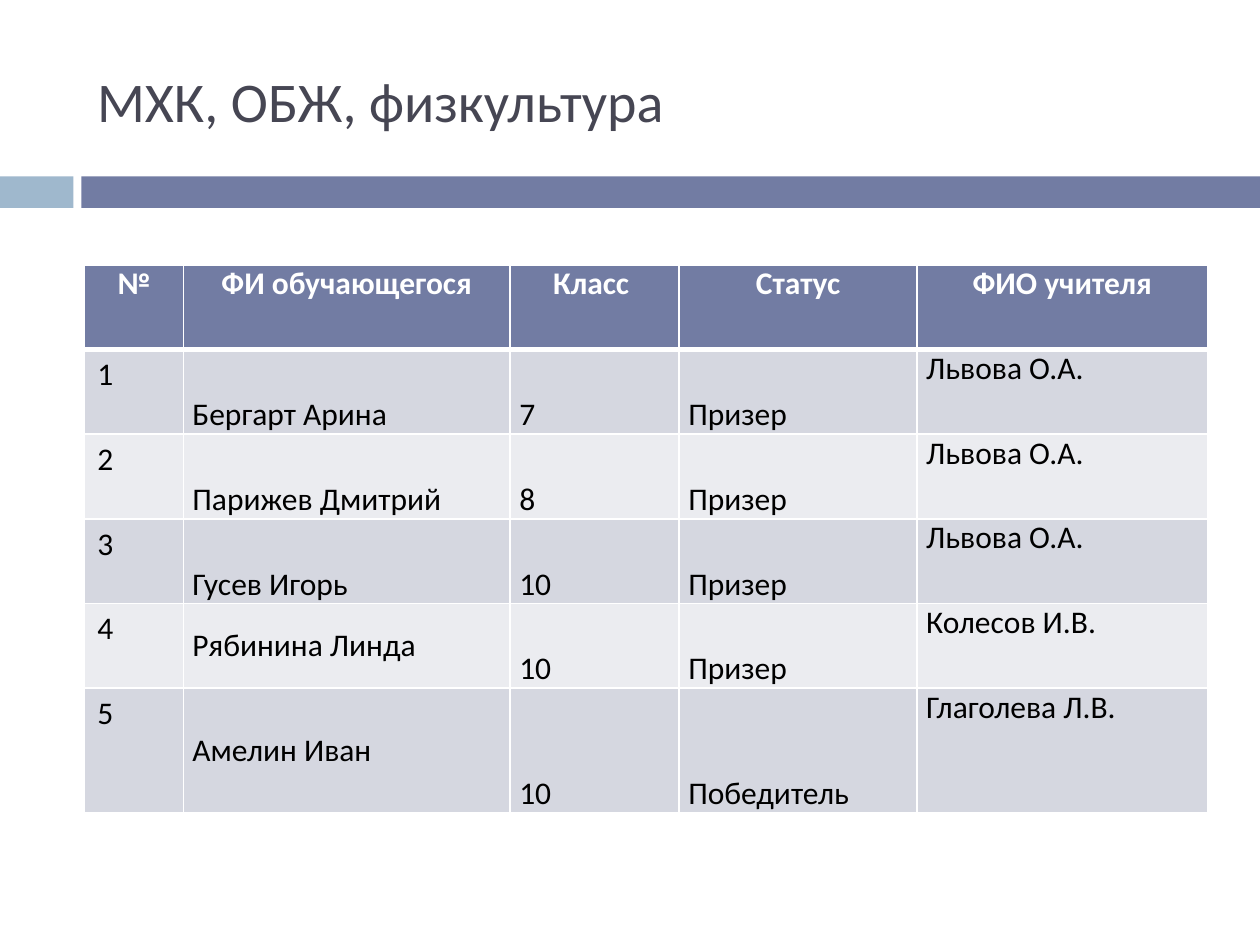
import pptx
import pptx.util
import pptx.dml.color
import pptx.enum.shapes
import pptx.enum.text
import pptx.oxml.ns
import lxml.etree

Pt = pptx.util.Pt
ALIGN = pptx.enum.text.PP_ALIGN
ANCHOR = pptx.enum.text.MSO_ANCHOR

COLORS = {
    "title": "464653",
    "accent": "727CA3",
    "light_accent": "9FB8CD",
    "odd_row": "D5D7E0",
    "even_row": "EBECF0",
    "white": "FFFFFF",
    "black": "000000",
}
COLUMN_WIDTHS = [56.4, 186.8, 96.6, 136, 165.8]
ROW_HEIGHTS = [48.4] * 5 + [71.2]
HEADERS = ["№", "ФИ обучающегося", "Класс ", "Статус", "ФИО учителя"]
HEADER_INDENTS = [-3, -34, -34, -34, -34]
STUDENTS = [
    ("1", "Бергарт Арина", "7", "Призер", "Львова О.А."),
    ("2", "Парижев Дмитрий", "8", "Призер", "Львова О.А."),
    ("3", "Гусев Игорь", "10", "Призер", "Львова О.А."),
    ("4", "Рябинина Линда", "10", "Призер", "Колесов И.В."),
    ("5", "Амелин Иван", "10", "Победитель", "Глаголева Л.В."),
]
MIDDLE_NAMES = {"Рябинина Линда", "Амелин Иван"}


def rgb(name):
    return pptx.dml.color.RGBColor.from_string(COLORS[name])


def write_text(frame, text, size=18, color="black", bold=False, align=ALIGN.LEFT, indent=0):
    paragraph = frame.paragraphs[0]
    paragraph.alignment = align
    if indent:
        properties = paragraph._p.get_or_add_pPr()
        properties.set("marL", "0")
        properties.set("indent", str(Pt(indent)))
    run = paragraph.add_run()
    run.text = text
    run.font.name = "Calibri"
    run.font.size = Pt(size)
    run.font.bold = bold
    run.font.color.rgb = rgb(color)


def add_bar(slide, left, width, color):
    shape = slide.shapes.add_shape(
        pptx.enum.shapes.MSO_SHAPE.RECTANGLE, Pt(left), Pt(100.8), Pt(width), Pt(18))
    shape.shadow.inherit = False
    shape.fill.solid()
    shape.fill.fore_color.rgb = rgb(color)
    shape.line.fill.background()


def add_title(slide, text):
    shape = slide.shapes.add_textbox(Pt(48.4), Pt(18), Pt(642), Pt(78))
    shape.text_frame.word_wrap = True
    shape.text_frame.vertical_anchor = ANCHOR.MIDDLE
    write_text(shape.text_frame, text, size=32, color="title")


def set_borders(cell, top=1, bottom=1):
    qn = pptx.oxml.ns.qn
    properties = cell._tc.get_or_add_tcPr()
    for side, width in (("L", 1), ("R", 1), ("T", top), ("B", bottom)):
        line = lxml.etree.SubElement(properties, qn("a:ln" + side), w=str(Pt(width)))
        fill = lxml.etree.SubElement(line, qn("a:solidFill"))
        lxml.etree.SubElement(fill, qn("a:srgbClr"), val=COLORS["white"])


def format_cell(cell, fill, anchor=ANCHOR.TOP, narrow=True, **borders):
    set_borders(cell, **borders)
    cell.fill.solid()
    cell.fill.fore_color.rgb = rgb(fill)
    cell.vertical_anchor = anchor
    if narrow:
        cell.margin_left = cell.margin_right = Pt(5.2)
        cell.margin_top = cell.margin_bottom = 0


def body_anchor(column, text):
    if text in MIDDLE_NAMES:
        return ANCHOR.MIDDLE
    return ANCHOR.BOTTOM if column in (1, 2, 3) else ANCHOR.TOP


def add_results_table(slide):
    table = slide.shapes.add_table(
        len(ROW_HEIGHTS), len(COLUMN_WIDTHS), Pt(48.4), Pt(151.3),
        Pt(sum(COLUMN_WIDTHS)), Pt(sum(ROW_HEIGHTS))).table
    for column, width in zip(table.columns, COLUMN_WIDTHS):
        column.width = Pt(width)
    for row, height in zip(table.rows, ROW_HEIGHTS):
        row.height = Pt(height)

    for column, (text, indent) in enumerate(zip(HEADERS, HEADER_INDENTS)):
        cell = table.cell(0, column)
        format_cell(cell, "accent", bottom=3)
        write_text(cell.text_frame, text, color="white", bold=True,
                   align=ALIGN.CENTER, indent=indent)

    for row, student in enumerate(STUDENTS, start=1):
        for column, text in enumerate(student):
            cell = table.cell(row, column)
            format_cell(cell, "odd_row" if row % 2 else "even_row",
                        anchor=body_anchor(column, text), narrow=column > 0,
                        top=3 if row == 1 else 1)
            justified = column == 4 and row <= 3
            write_text(cell.text_frame, text,
                       align=ALIGN.JUSTIFY if justified else ALIGN.LEFT)


def main():
    presentation = pptx.Presentation()
    presentation.slide_width = Pt(720)
    presentation.slide_height = Pt(540)
    slide = presentation.slides.add_slide(presentation.slide_layouts[6])
    add_bar(slide, 0, 42, "light_accent")
    add_bar(slide, 46.5, 673.5, "accent")
    add_title(slide, "МХК, ОБЖ, физкультура")
    add_results_table(slide)
    presentation.save("out.pptx")


if __name__ == "__main__":
    main()
